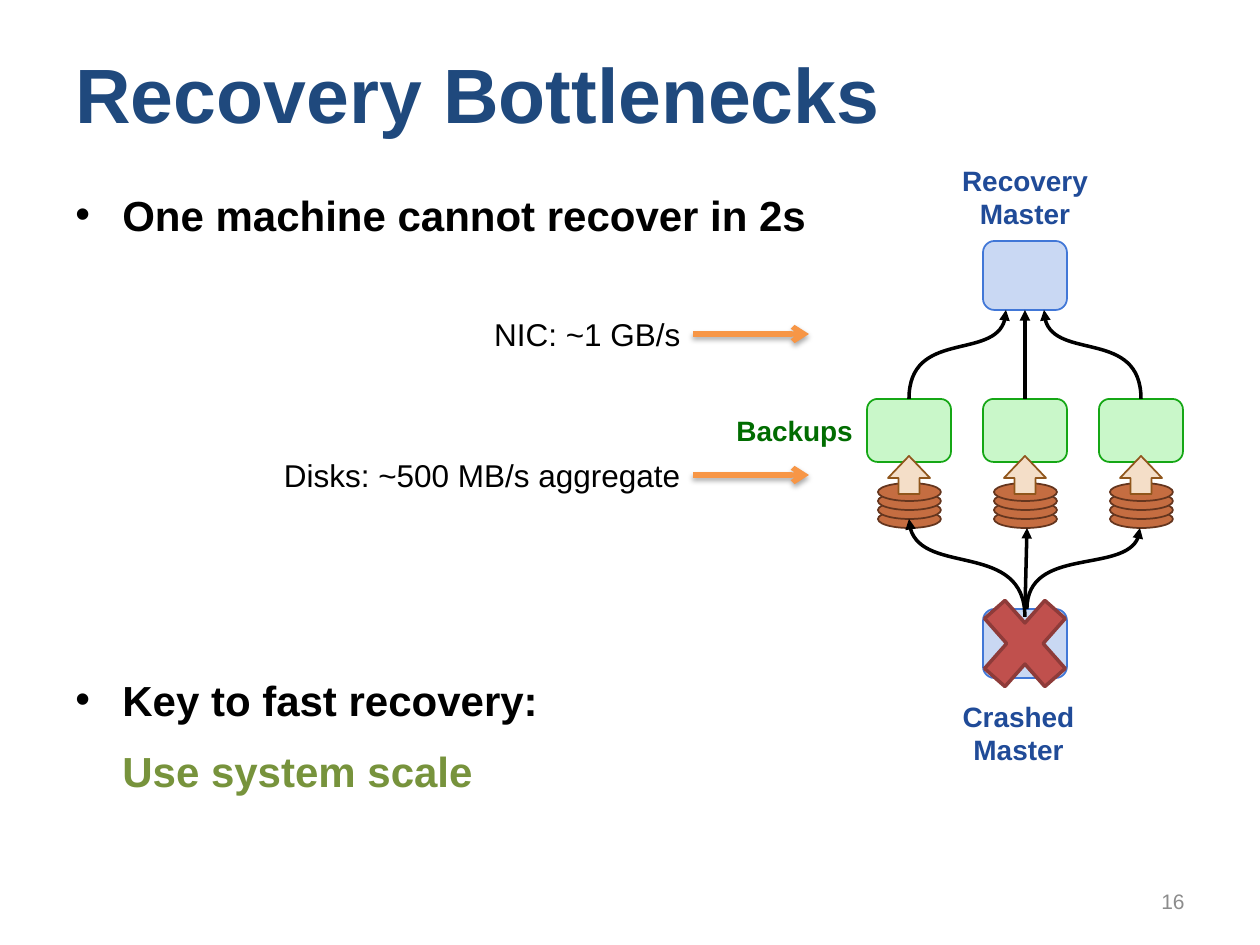
from lxml import etree
from pptx import Presentation
from pptx.dml.color import RGBColor
from pptx.enum.shapes import MSO_CONNECTOR as Link, MSO_SHAPE as Shape
from pptx.enum.text import MSO_ANCHOR as Anchor, PP_ALIGN as Align
from pptx.oxml.ns import qn
from pptx.util import Pt

PX = 914400 / 126
NAVY = RGBColor(0x1F, 0x49, 0x7D)
BLACK = RGBColor(0, 0, 0)
OLIVE = RGBColor(0x77, 0x93, 0x3C)
GRAY = RGBColor(0x8C, 0x8C, 0x8C)
ORANGE = RGBColor(0xF7, 0x96, 0x46)
BLUE = RGBColor(0x20, 0x4B, 0x98)
GREEN = RGBColor(0, 0x6C, 0)
MASTER_STYLE = RGBColor(0xC9, 0xD8, 0xF3), RGBColor(0x41, 0x77, 0xD7), 1
BACKUP_STYLE = RGBColor(0xC9, 0xF7, 0xC9), RGBColor(0x15, 0xA7, 0x15), 1
DISK_STYLE = RGBColor(0xC5, 0x6D, 0x41), RGBColor(0x64, 0x35, 0x1E), 1
READ_STYLE = RGBColor(0xF4, 0xDE, 0xC8), RGBColor(0x90, 0x56, 0x1C), 1
CRASH_STYLE = RGBColor(0xC0, 0x50, 0x4D), RGBColor(0x8E, 0x3B, 0x39), 2


def px(*lengths):
    return [round(length * PX) for length in lengths]


def add_child(parent, tag, **attributes):
    return etree.SubElement(parent, qn(tag), attributes)


def add_text(slide, box, lines, size, color, bold=False, align=Align.LEFT,
             anchor=Anchor.TOP, wrap=True):
    frame = slide.shapes.add_textbox(*px(*box)).text_frame
    frame.word_wrap, frame.vertical_anchor = wrap, anchor
    for number, line in enumerate(lines):
        paragraph = frame.add_paragraph() if number else frame.paragraphs[0]
        paragraph.alignment = align
        run = paragraph.add_run()
        run.text = line
        run.font.color.rgb = color
        look = {"name": "Arial", "size": Pt(size), "bold": bold}
        for key, value in look.items():
            setattr(run.font, key, value)
    return frame.paragraphs


def add_box(slide, kind, box, style):
    fill, line, weight = style
    shape = slide.shapes.add_shape(kind, *px(*box))
    shape.shadow.inherit = False
    shape.fill.solid()
    shape.fill.fore_color.rgb = fill
    shape.line.color.rgb = line
    shape.line.width = Pt(weight)
    return shape


def style_arrow(arrow, color, weight, head):
    arrow.line.color.rgb = color
    arrow.line.width = Pt(weight)
    add_child(arrow.line._get_or_add_ln(), "a:tailEnd", type=head)


def add_arrow(slide, start, end, color=BLACK, weight=2, head="triangle"):
    arrow = slide.shapes.add_connector(Link.STRAIGHT, *px(*start, *end))
    style_arrow(arrow, color, weight, head)
    effects = add_child(arrow.element.spPr, "a:effectLst")
    return arrow, effects


def add_curve(slide, start, *controls_and_end):
    builder = slide.shapes.build_freeform(*px(*start), scale=1.0)
    builder.add_line_segments([px(*point) for point in controls_and_end], close=False)
    curve = builder.convert_to_shape()
    curve.shadow.inherit = False
    curve.fill.background()
    outline = curve.element.find(".//" + qn("a:path"))
    bezier = add_child(outline, "a:cubicBezTo")
    for segment in outline.findall(qn("a:lnTo")):
        bezier.append(segment[0])
        outline.remove(segment)
    style_arrow(curve, BLACK, 2, "triangle")


def add_bullet(paragraph):
    properties = paragraph._p.get_or_add_pPr()
    properties.set("indent", str(-px(47)[0]))
    add_child(properties, "a:buFont", typeface="Arial")
    add_child(properties, "a:buChar", char="•")


def add_points(slide, left, top, width, height, heading, *details):
    paragraphs = add_text(slide, (left, top, width, height), [heading, *details],
                          24, BLACK, bold=True)
    for paragraph in paragraphs:
        paragraph.space_after = Pt(12)
        paragraph._p.get_or_add_pPr().set("marL", str(px(47)[0]))
    add_bullet(paragraphs[0])
    for paragraph in paragraphs[1:]:
        paragraph.runs[0].font.color.rgb = OLIVE


def add_bottleneck(slide, left, top, width, height, label):
    arrow_length = 116
    tip, middle = left + width, top + height // 2
    _, effects = add_arrow(slide, (tip - arrow_length, middle), (tip, middle),
                           ORANGE, 3, "arrow")
    shadow = add_child(effects, "a:outerShdw", blurRad=str(Pt(3.1)),
                       dist=str(Pt(1.8)), dir="5400000", rotWithShape="0")
    shade = add_child(shadow, "a:srgbClr", val="000000")
    add_child(shade, "a:alpha", val="35000")
    add_text(slide, (left, top, width - arrow_length, height), [label], 18, BLACK,
             align=Align.RIGHT, wrap=False)


def add_backup(slide, left, top):
    for layer in reversed(range(4)):
        add_box(slide, Shape.OVAL, (left + 11, top + 84 + 9 * layer, 63, 18), DISK_STYLE)
    backup = add_box(slide, Shape.ROUNDED_RECTANGLE, (left, top, 84, 63), BACKUP_STYLE)
    read = add_box(slide, Shape.UP_ARROW, (left + 21, top + 57, 42, 38), READ_STYLE)
    read.adjustments[1] = 0.58
    return backup


def add_recovery_diagram(slide, left, top):
    def at(x, y, *size):
        return left + x, top + y, *size

    center, pitch, half = 301, 116, 42
    master = add_box(slide, Shape.ROUNDED_RECTANGLE,
                     at(center - half, 84, 84, 69), MASTER_STYLE)
    add_text(slide, at(225, 0, 152, 81), ["Recovery", "Master"], 16, BLUE,
             bold=True, align=Align.CENTER, wrap=False)
    add_text(slide, at(0, 250, 142, 47), ["Backups"], 16, GREEN, bold=True, wrap=False)

    backups = [add_backup(slide, *at(center - half + pitch * side, 242))
               for side in (-1, 0, 1)]
    for side in (-1, 1):
        outer = center + side * pitch
        add_curve(slide, at(outer, 242), at(outer, 172),
                  at(center + side * 19, 208), at(center + side * 19, 153))
    to_master, _ = add_arrow(slide, at(center, 242), at(center, 153))
    to_master.begin_connect(backups[1], 0)
    to_master.end_connect(master, 2)

    crashed = add_box(slide, Shape.ROUNDED_RECTANGLE,
                      at(center - half, 452, 84, 69), MASTER_STYLE)
    add_text(slide, at(225, 536, 139, 81), ["Crashed", "Master"], 16, BLUE,
             bold=True, align=Align.CENTER, wrap=False)
    add_curve(slide, at(301, 460), at(301, 384), at(187, 423), at(185, 362))
    add_curve(slide, at(303, 452), at(303, 389), at(415, 421), at(416, 371))
    to_disk, _ = add_arrow(slide, at(center, 452), at(303, 371))
    to_disk.begin_connect(crashed, 0)
    add_box(slide, Shape.MATH_MULTIPLY, at(243, 578 - 157, 116, 131), CRASH_STYLE)


def main():
    deck = Presentation()
    deck.slide_width, deck.slide_height = px(1260, 945)
    slide = deck.slides.add_slide(deck.slide_layouts[6])
    add_text(slide, (63, 38, 1134, 110), ["Recovery Bottlenecks"], 44, NAVY,
             bold=True, anchor=Anchor.MIDDLE)
    add_points(slide, 63, 183, 766, 60, "One machine cannot recover in 2s")
    add_points(slide, 63, 668, 766, 130, "Key to fast recovery:", "Use system scale")
    add_recovery_diagram(slide, 724, 157)
    add_bottleneck(slide, 267, 450, 542, 50, "Disks: ~500 MB/s aggregate")
    add_bottleneck(slide, 479, 309, 330, 50, "NIC: ~1 GB/s")
    add_text(slide, (903, 876, 294, 50), ["16"], 12, GRAY,
             align=Align.RIGHT, anchor=Anchor.MIDDLE)
    deck.save("out.pptx")


if __name__ == "__main__":
    main()
